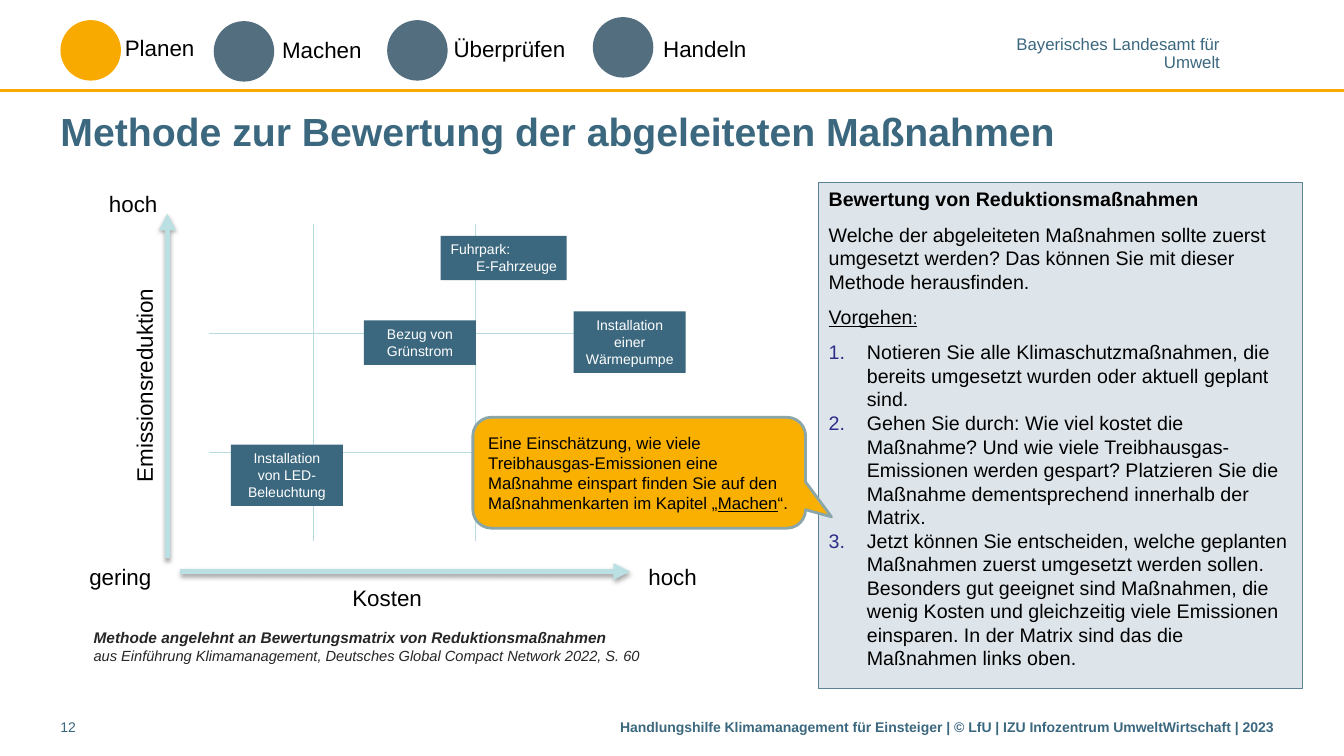
from dataclasses import dataclass

from lxml import etree
from pptx import Presentation
from pptx.dml.color import RGBColor
from pptx.enum.shapes import MSO_CONNECTOR, MSO_SHAPE
from pptx.enum.text import MSO_ANCHOR, PP_ALIGN
from pptx.oxml.ns import qn
from pptx.util import Inches, Pt

LEFT, CENTER, RIGHT = PP_ALIGN.LEFT, PP_ALIGN.CENTER, PP_ALIGN.RIGHT
TOP, MIDDLE = MSO_ANCHOR.TOP, MSO_ANCHOR.MIDDLE
RECTANGLE, ELLIPSE = MSO_SHAPE.RECTANGLE, MSO_SHAPE.OVAL
CALLOUT = MSO_SHAPE.ROUNDED_RECTANGULAR_CALLOUT
STRAIGHT = MSO_CONNECTOR.STRAIGHT


@dataclass(frozen=True)
class Theme:
    font: str = "Arial"
    blue: str = "3B687F"
    slate: str = "526E7F"
    amber: str = "F9AA00"
    callout: str = "F9B000"
    callout_line: str = "8AA6A8"
    panel: str = "DEE5EA"
    panel_line: str = "5C8395"
    axis: str = "BBE0E3"
    grid: str = "B6DCDF"
    number: str = "2D2D8A"
    black: str = "000000"
    caption_ink: str = "262626"
    white: str = "FFFFFF"
    title: float = 28
    label: float = 16
    body: float = 14
    note: float = 12
    caption: float = 11
    source: float = 10.5
    small: float = 10


THEME = Theme()
WIDTH, HEIGHT = 13.33, 7.5
MARGIN = 0.6

TITLE = "Methode zur Bewertung der abgeleiteten Maßnahmen"
AUTHORITY = ["Bayerisches Landesamt für", "Umwelt"]
FOOTER = ("Handlungshilfe Klimamanagement für Einsteiger | © LfU | "
          "IZU\u00a0Infozentrum UmweltWirtschaft | 2023")
PAGE = "12"

# name, circle left, circle top, label left, label top, circle colour
PHASES = [
    ("Planen", 0.6, 0.2, 1.14, 0.29, THEME.amber),
    ("Machen", 2.12, 0.21, 2.7, 0.31, THEME.slate),
    ("Überprüfen", 3.84, 0.2, 4.4, 0.3, THEME.slate),
    ("Handeln", 5.88, 0.17, 6.48, 0.3, THEME.slate),
]
# text, left, top, width, alignment
MATRIX_LABELS = [
    ("gering", 0.6, 5.54, 1, RIGHT),
    ("hoch", 6.18, 5.54, 0.83, RIGHT),
    ("hoch", 0.83, 1.84, 0.83, RIGHT),
    ("Kosten", 1.43, 5.75, 4.82, CENTER),
    ("Emissionsreduktion", -0.28, 3.64, 3.42, CENTER),
]
AXES = [(1.66, 5.54, 1.66, 2.12), (1.79, 5.67, 6.25, 5.67)]
GRID_LEFT, GRID_TOP, GRID_RIGHT, GRID_BOTTOM = 2.07, 2.22, 5.97, 5.37
COLUMN, ROW = 1.61, 1.18
FIRST_COLUMN, FIRST_ROW = 3.11, 3.31

# left, top, width, number of lines, paragraphs with alignment
MEASURES = [
    (2.29, 4.41, 1.11, 3, [("Installation von LED- Beleuchtung", CENTER)]),
    (3.61, 3.18, 1.11, 2, [("Bezug von Grünstrom", CENTER)]),
    (5.69, 3.09, 1.11, 3, [("Installation einer Wärmepumpe", CENTER)]),
    (4.37, 2.34, 1.25, 2, [("Fuhrpark:", LEFT), ("E-Fahrzeuge", RIGHT)]),
]
PANEL_TITLE = "Bewertung von Reduktionsmaßnahmen"
PANEL_INTRO = ("Welche der abgeleiteten Maßnahmen sollte zuerst umgesetzt werden? "
               "Das können Sie mit dieser Methode herausfinden.")
STEPS_TITLE = "Vorgehen"
STEPS = [
    "Notieren Sie alle Klimaschutzmaßnahmen, die bereits umgesetzt wurden oder "
    "aktuell geplant sind.",
    "Gehen Sie durch: Wie viel kostet die Maßnahme? Und wie viele "
    "Treibhausgas-Emissionen werden gespart? Platzieren Sie die Maßnahme "
    "dementsprechend innerhalb der Matrix.",
    "Jetzt können Sie entscheiden, welche geplanten Maßnahmen zuerst umgesetzt "
    "werden sollen. Besonders gut geeignet sind Maßnahmen, die wenig Kosten und "
    "gleichzeitig viele Emissionen einsparen. In der Matrix sind das die "
    "Maßnahmen links oben.",
]
HINT = ("Eine Einschätzung, wie viele Treibhausgas-Emissionen eine Maßnahme einspart "
        "finden Sie auf den Maßnahmenkarten im Kapitel „", "Machen", "“.")
CAPTION = "Methode angelehnt an Bewertungsmatrix von Reduktionsmaßnahmen"
SOURCE = "aus Einführung Klimamanagement, Deutsches Global Compact Network 2022, S. 60"


def rgb(colour):
    return RGBColor.from_string(colour)


def inches(*values):
    return [Inches(value) for value in values]


def set_font(paragraph, size, colour, bold=False, italic=False):
    font = paragraph.font
    font.name, font.size, font.bold, font.italic = THEME.font, Pt(size), bold, italic
    font.color.rgb = rgb(colour)


def set_frame(shape, anchor=TOP, margins=(0.1, 0.05)):
    frame = shape.text_frame
    frame.word_wrap = True
    frame.vertical_anchor = anchor
    frame.margin_left = frame.margin_right = Inches(margins[0])
    frame.margin_top = frame.margin_bottom = Inches(margins[1])
    return frame


def write(frame, paragraphs, size, colour, bold=False):
    """Fill the frame with (text, alignment) pairs in one style."""
    for index, (text, alignment) in enumerate(paragraphs):
        paragraph = frame.add_paragraph() if index else frame.paragraphs[0]
        paragraph.text = text
        paragraph.alignment = alignment
        set_font(paragraph, size, colour, bold)
    return frame


def add_text(slide, box, paragraphs, size, colour, bold=False, anchor=TOP,
             margins=(0.1, 0.05)):
    shape = slide.shapes.add_textbox(*inches(*box))
    write(set_frame(shape, anchor, margins), paragraphs, size, colour, bold)
    return shape


def add_block(slide, kind, box, fill, line=None, line_width=1):
    shape = slide.shapes.add_shape(kind, *inches(*box))
    shape.shadow.inherit = False
    shape.fill.solid()
    shape.fill.fore_color.rgb = rgb(fill)
    if line:
        shape.line.color.rgb = rgb(line)
        shape.line.width = Pt(line_width)
    else:
        shape.line.fill.background()
    return shape


def add_line(slide, ends, colour, width, arrow=False):
    """Draw a plain line, or an axis arrow with a soft shadow below it."""
    connector = slide.shapes.add_connector(STRAIGHT, *inches(*ends))
    connector.line.color.rgb = rgb(colour)
    connector.line.width = Pt(width)
    properties = connector._element.spPr
    effects = etree.SubElement(properties, qn("a:effectLst"))
    if arrow:
        etree.SubElement(properties.find(qn("a:ln")), qn("a:tailEnd"), type="triangle")
        shadow = etree.SubElement(effects, qn("a:outerShdw"), blurRad=str(Pt(3.1)),
                                  dist=str(Pt(1.8)), dir="5400000", rotWithShape="0")
        tint = etree.SubElement(shadow, qn("a:srgbClr"), val=THEME.black)
        etree.SubElement(tint, qn("a:alpha"), val="35000")


def number_step(paragraph):
    properties = paragraph._p.get_or_add_pPr()
    properties.set("marL", str(Inches(0.38)))
    properties.set("indent", str(Inches(-0.38)))
    colour = etree.SubElement(properties, qn("a:buClr"))
    etree.SubElement(colour, qn("a:srgbClr"), val=THEME.number)
    etree.SubElement(properties, qn("a:buAutoNum"), type="arabicPeriod")


def add_header(slide):
    add_line(slide, (0, 0.9, WIDTH, 0.9), THEME.amber, 2)
    authority = add_text(slide, (10, 0.37, 2.1, 0.34), [(line, RIGHT) for line in AUTHORITY],
                         THEME.note, THEME.blue, margins=(0, 0))
    for paragraph in authority.text_frame.paragraphs:
        paragraph.line_spacing = 0.85
    for name, left, top, label_left, label_top, colour in PHASES:
        add_block(slide, ELLIPSE, (left, top, 0.6, 0.6), colour)
        add_text(slide, (label_left, label_top, 1.4, 0.37), [(name, LEFT)],
                 THEME.label, THEME.black)
    add_text(slide, (MARGIN, 1.02, 12.31, 0.55), [(TITLE, LEFT)], THEME.title,
             THEME.blue, bold=True, anchor=MIDDLE, margins=(0, 0.05))


def add_matrix(slide):
    for ends in AXES:
        add_line(slide, ends, THEME.axis, 4, arrow=True)
    for index in range(2):
        x, y = FIRST_COLUMN + index * COLUMN, FIRST_ROW + index * ROW
        add_line(slide, (x, GRID_TOP, x, GRID_BOTTOM), THEME.grid, 0.75)
        add_line(slide, (GRID_LEFT, y, GRID_RIGHT, y), THEME.grid, 0.75)
    for text, left, top, width, alignment in MATRIX_LABELS:
        label = add_text(slide, (left, top, width, 0.37), [(text, alignment)],
                         THEME.label, THEME.black)
    label.rotation = 270
    for left, top, width, lines, paragraphs in MEASURES:
        box = (left, top, width, 0.1 + 0.17 * lines)
        measure = add_block(slide, RECTANGLE, box, THEME.blue)
        write(set_frame(measure), paragraphs, THEME.small, THEME.white)
    caption = add_text(slide, (0.83, 6.18, 5.92, 0.4), [(CAPTION, LEFT)],
                       THEME.caption, THEME.caption_ink).text_frame.paragraphs[0]
    set_font(caption, THEME.caption, THEME.caption_ink, italic=True)
    caption.runs[0].font.bold = True
    caption.add_line_break()
    source = caption.add_run()
    source.text = SOURCE
    source.font.size = Pt(THEME.source)


def add_panel(slide):
    panel = add_block(slide, RECTANGLE, (8.12, 1.81, 4.8, 5.02), THEME.panel, THEME.panel_line)
    texts = [PANEL_TITLE, PANEL_INTRO, STEPS_TITLE, *STEPS]
    frame = set_frame(panel)
    for index, text in enumerate(texts):
        paragraph = frame.add_paragraph() if index else frame.paragraphs[0]
        paragraph.text = text
        paragraph.alignment = LEFT
        if 0 < index < 4:
            paragraph.space_before = Pt(8.4)
        if text in STEPS:
            number_step(paragraph)
        set_font(paragraph, THEME.body, THEME.black, bold=text == PANEL_TITLE)
        if text == STEPS_TITLE:
            paragraph.font.underline = True
            colon = paragraph.add_run()
            colon.text = ":"
            colon.font.size = Pt(THEME.note)


def add_hint(slide):
    hint = add_block(slide, CALLOUT, (4.69, 4.14, 3.3, 1.1), THEME.callout,
                     THEME.callout_line, 2)
    for index, value in enumerate((0.578, 0.398, 0.167)):
        hint.adjustments[index] = value
    paragraph = set_frame(hint, MIDDLE).paragraphs[0]
    paragraph.alignment = LEFT
    set_font(paragraph, THEME.note, THEME.black)
    for text in HINT:
        run = paragraph.add_run()
        run.text = text
        run.font.underline = text == "Machen"


def add_footer(slide):
    for text, left, width, bold in ((FOOTER, 6.15, 6.76, True), (PAGE, MARGIN, 0.3, False)):
        add_text(slide, (left, 7.08, width, 0.31), [(text, LEFT)], THEME.small,
                 THEME.blue, bold, margins=(0, 0.05))


def main():
    presentation = Presentation()
    presentation.slide_width, presentation.slide_height = inches(WIDTH, HEIGHT)
    slide = presentation.slides.add_slide(presentation.slide_layouts[6])
    for add_part in (add_header, add_panel, add_matrix, add_hint, add_footer):
        add_part(slide)
    presentation.save("out.pptx")


if __name__ == "__main__":
    main()
